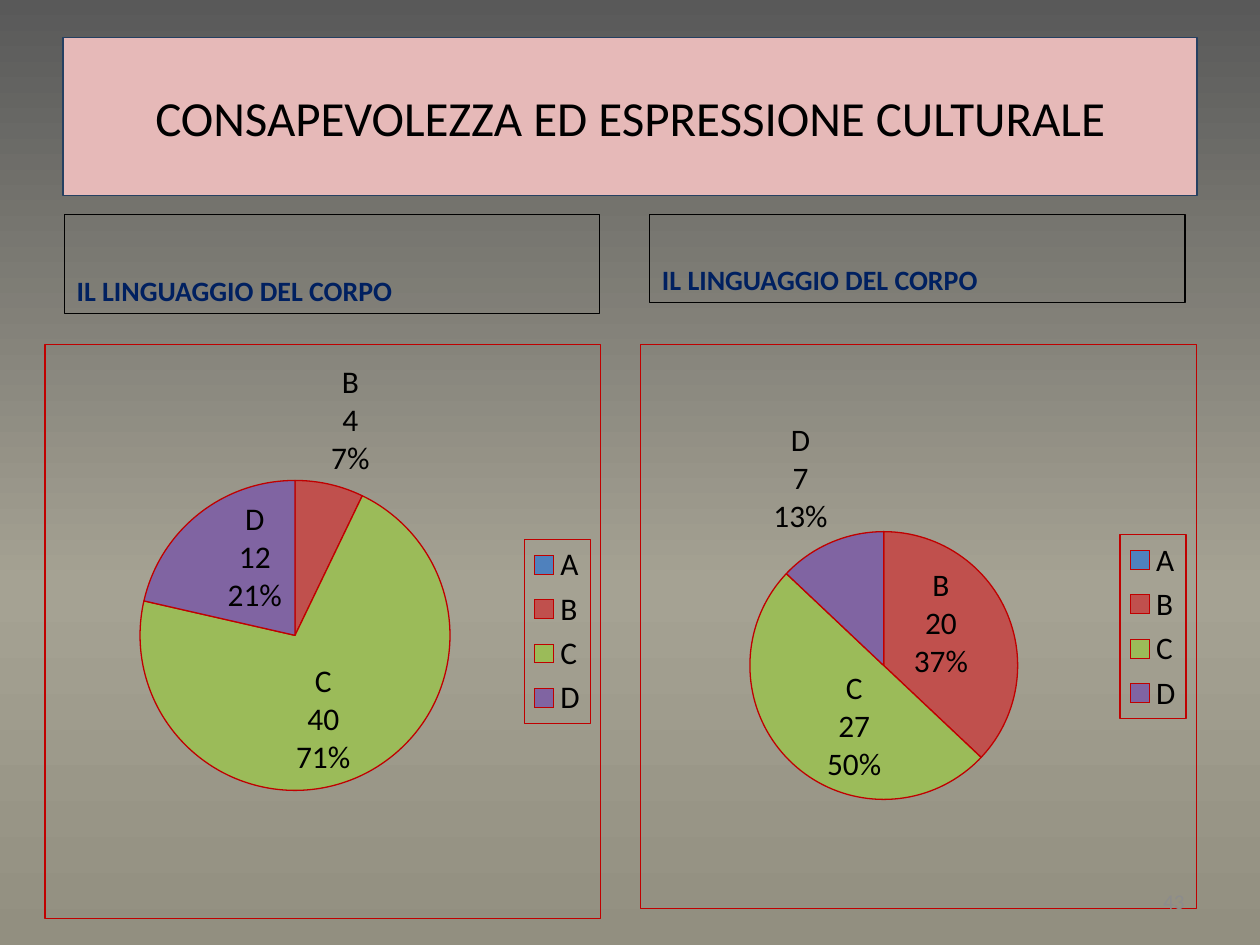
from copy import deepcopy
from typing import NamedTuple, Optional

from lxml.etree import SubElement
from pptx import Presentation
from pptx.chart.data import CategoryChartData
from pptx.dml.color import RGBColor
from pptx.enum.chart import XL_CHART_TYPE, XL_LABEL_POSITION, XL_LEGEND_POSITION
from pptx.enum.shapes import MSO_SHAPE
from pptx.enum.text import MSO_ANCHOR, PP_ALIGN
from pptx.oxml import parse_xml
from pptx.oxml.ns import nsdecls, qn
from pptx.util import Pt

FONT = "Calibri"
RED = "C00000"
LINE_WIDTH = Pt(0.75)
CATEGORIES = ("A", "B", "C", "D")
SLICE_COLORS = ("4F81BD", "C0504D", "9BBB59", "8064A2")
GRADIENT = ((0, "595959"), (0.62, "A5A293"), (1, "928F80"))


class Box(NamedTuple):
    left: float
    top: float
    width: float
    height: float


class Label(NamedTuple):
    text: str
    box: Box
    size: float
    color: str
    line: Optional[str] = None
    fill: Optional[str] = None
    bold: bool = False
    align: PP_ALIGN = PP_ALIGN.LEFT
    anchor: MSO_ANCHOR = MSO_ANCHOR.MIDDLE


class Pie(NamedTuple):
    box: Box
    values: tuple


def heading(box: Box) -> Label:
    return Label("IL LINGUAGGIO DEL CORPO", box, 16, "002060", line="000000",
                 bold=True, anchor=MSO_ANCHOR.BOTTOM)


LABELS = (
    Label("CONSAPEVOLEZZA ED ESPRESSIONE CULTURALE", Box(36, 21.6, 648, 90), 28,
          "000000", line="254061", fill="E6B9B8", align=PP_ALIGN.CENTER),
    heading(Box(36.7, 122.4, 306, 56.7)),
    heading(Box(371.2, 122.4, 306, 50.4)),
)
PIES = (
    Pie(Box(25.4, 196.4, 318.2, 328.8), (0, 4, 40, 12)),
    Pie(Box(365.8, 196.4, 318.2, 323.2), (0, 20, 27, 7)),
)
PAGE_NUMBER = Label("43", Box(516, 500.5, 168, 28.7), 12, "8C8C8C",
                    align=PP_ALIGN.RIGHT)


def rgb(color: str) -> RGBColor:
    return RGBColor.from_string(color)


def place(box: Box) -> tuple:
    return tuple(Pt(v) for v in box)


def paint_background(s) -> None:
    fill = s.background.fill
    fill.gradient()
    fill.gradient_angle = 270
    stops = s.element.find(".//" + qn("a:gsLst"))
    stops.insert(1, deepcopy(stops[0]))
    for stop, (position, color) in zip(fill.gradient_stops, GRADIENT):
        stop.position = position
        stop.color.rgb = rgb(color)


def add_label(s, label: Label) -> None:
    if label.line:
        sp = s.shapes.add_shape(MSO_SHAPE.RECTANGLE, *place(label.box))
        sp.shadow.inherit = False
        sp.line.color.rgb = rgb(label.line)
        sp.line.width = LINE_WIDTH
    else:
        sp = s.shapes.add_textbox(*place(label.box))
    if label.fill:
        sp.fill.solid()
        sp.fill.fore_color.rgb = rgb(label.fill)
    else:
        sp.fill.background()
    tf = sp.text_frame
    tf.word_wrap = True
    tf.vertical_anchor = label.anchor
    p = tf.paragraphs[0]
    p.text = label.text
    p.alignment = label.align
    p.font.name = FONT
    p.font.size = Pt(label.size)
    p.font.bold = label.bold
    p.font.color.rgb = rgb(label.color)


def outline_after(element, color: str) -> None:
    element.addnext(parse_xml(
        f'<c:spPr {nsdecls("c", "a")}><a:noFill/><a:ln w="{LINE_WIDTH}">'
        f'<a:solidFill><a:srgbClr val="{color}"/></a:solidFill></a:ln></c:spPr>'))


def label_slices(series) -> None:
    labels = series.data_labels
    labels.show_category_name = True
    labels.show_value = True
    labels.show_percentage = True
    labels.position = XL_LABEL_POSITION.BEST_FIT
    root = series._element.find(qn("c:dLbls"))
    separator = parse_xml(f'<c:separator {nsdecls("c")}>\n</c:separator>')
    following = root.find(qn("c:showLeaderLines"))
    if following is None:
        root.append(separator)
    else:
        following.addprevious(separator)
    for i, value in enumerate(series.values):
        if not value:
            hidden = parse_xml(f'<c:dLbl {nsdecls("c")}><c:idx val="{i}"/></c:dLbl>')
            SubElement(hidden, qn("c:delete")).set("val", "1")
            root.insert(0, hidden)


def add_pie(s, pie: Pie) -> None:
    data = CategoryChartData()
    data.categories = CATEGORIES
    data.add_series("Series 1", pie.values)
    chart = s.shapes.add_chart(XL_CHART_TYPE.PIE, *place(pie.box), data).chart
    chart.has_title = False
    chart.font.name = FONT
    chart.font.size = Pt(18)
    chart.font.color.rgb = rgb("000000")
    chart.has_legend = True
    chart.legend.position = XL_LEGEND_POSITION.RIGHT
    chart.legend.include_in_layout = False
    plot = chart.plots[0]
    plot.vary_by_categories = True
    series = plot.series[0]
    for i, color in enumerate(SLICE_COLORS):
        fmt = series.points[i].format
        fmt.fill.solid()
        fmt.fill.fore_color.rgb = rgb(color)
        fmt.line.color.rgb = rgb(RED)
        fmt.line.width = LINE_WIDTH
    label_slices(series)
    root = chart._chartSpace
    outline_after(root.find(qn("c:chart")), RED)
    outline_after(root.find(".//" + qn("c:legend") + "/" + qn("c:overlay")), RED)


def main() -> None:
    prs = Presentation()
    prs.slide_width, prs.slide_height = Pt(720), Pt(540)
    s = prs.slides.add_slide(prs.slide_layouts[6])
    paint_background(s)
    for label in LABELS:
        add_label(s, label)
    for pie in PIES:
        add_pie(s, pie)
    add_label(s, PAGE_NUMBER)
    prs.save("out.pptx")


if __name__ == "__main__":
    main()
